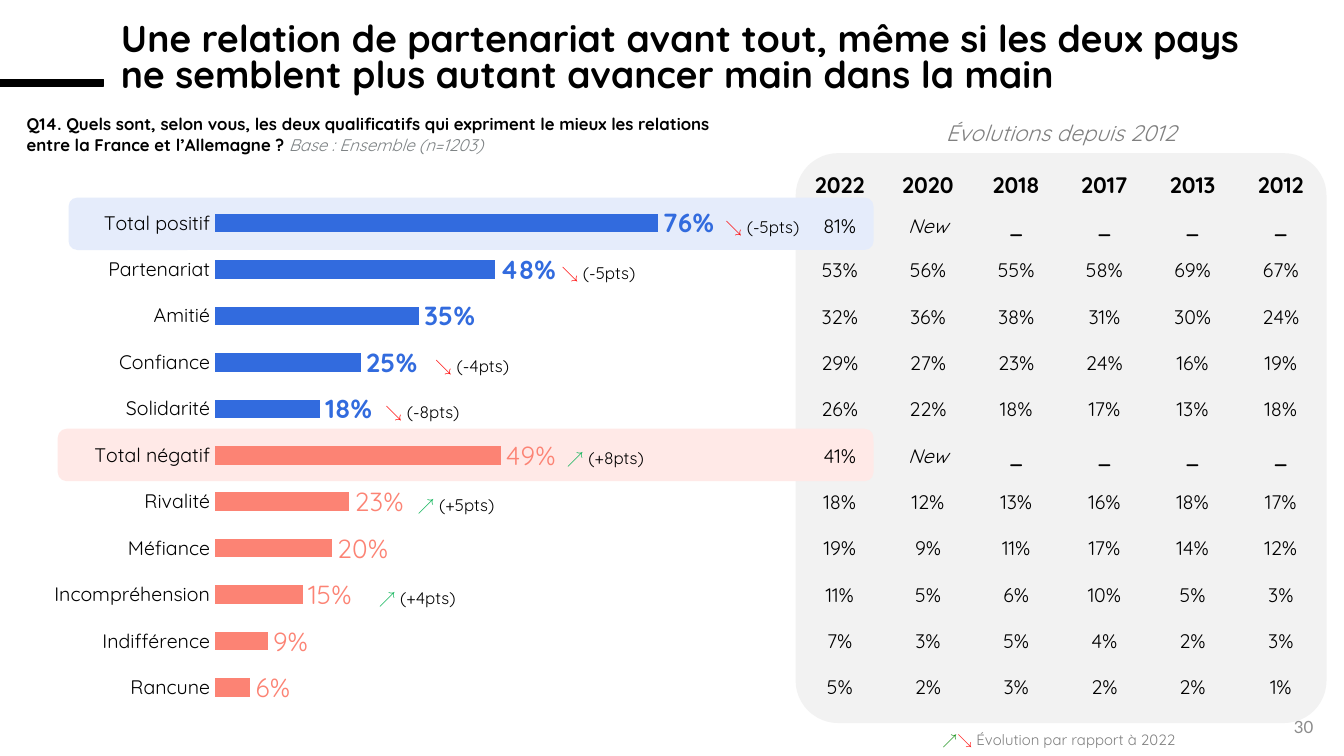
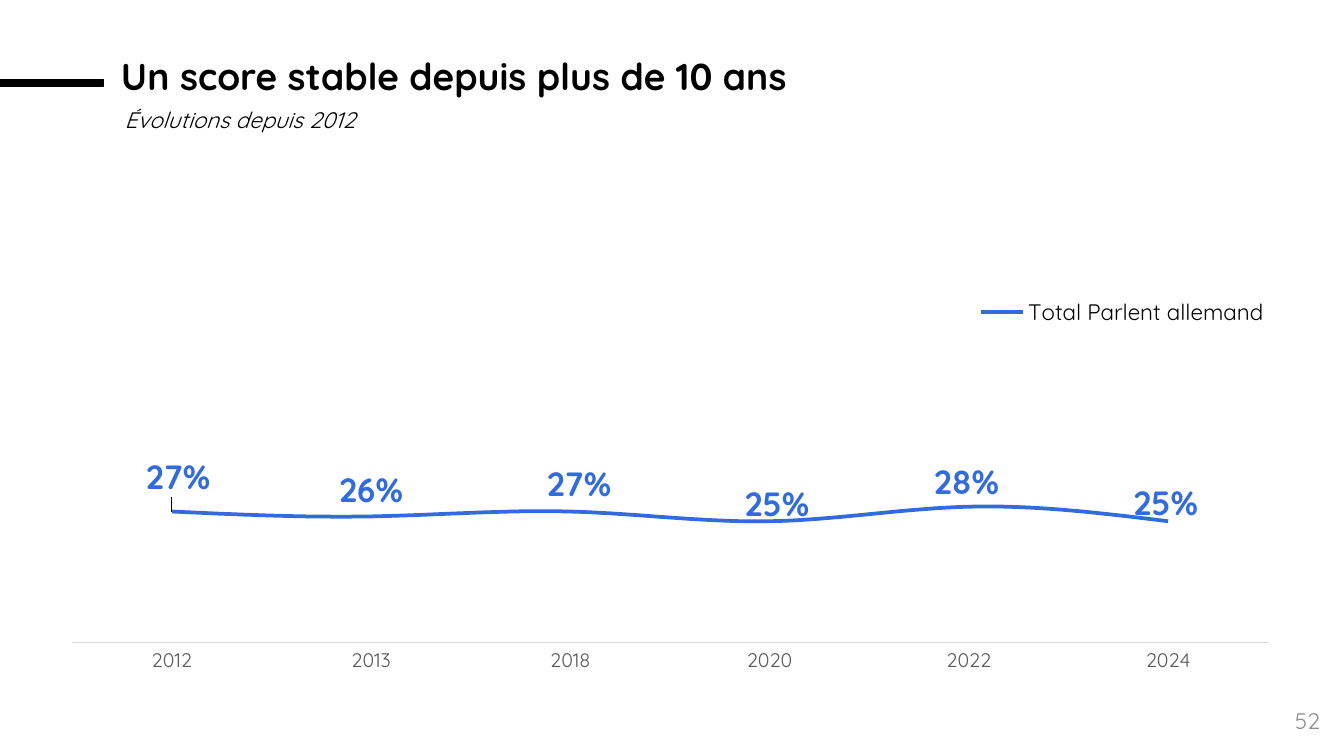
import pptx
import pptx.util
import pptx.oxml
import pptx.chart.data
import pptx.dml.color
import pptx.enum.chart
import pptx.enum.shapes
import pptx.enum.text

# Shared look
FONT = "Quicksand"
BLACK, GREY, PALE_GREY, PAGE_GREY = "000000", "808080", "F2F2F2", "8C8C8C"
BLUE, CORAL, PALE_BLUE, PALE_CORAL = "326BDE", "FC8374", "E5ECFB", "FFE9E7"
RED, GREEN, DARK_GREEN = "FF0000", "00B050", "008500"
NO_GRID_STYLE = "{2D5ABB26-0587-4C30-8999-92F81FD0307C}"
LAYOUT = ('<c:layout xmlns:c="http://schemas.openxmlformats.org/drawingml/2006/chart">'
          '<c:manualLayout>%s</c:manualLayout></c:layout>')
EDGES = '<c:xMode val="edge"/><c:yMode val="edge"/>'
FRAME = '<c:x val="%s"/><c:y val="%s"/><c:w val="%s"/><c:h val="%s"/>'
OFFSET = '<c:x val="%s"/><c:y val="%s"/>'

rgb = pptx.dml.color.RGBColor.from_string
Pt = pptx.util.Pt
SHAPE = pptx.enum.shapes.MSO_SHAPE
ALIGN = pptx.enum.text.PP_ALIGN
ANCHOR = pptx.enum.text.MSO_ANCHOR
AUTO = pptx.enum.text.MSO_AUTO_SIZE
CHART = pptx.enum.chart.XL_CHART_TYPE
LABEL = pptx.enum.chart.XL_LABEL_POSITION

prs = pptx.Presentation()
prs.slide_width = pptx.util.Inches(10)
prs.slide_height = pptx.util.Inches(5.625)
CELL = prs.slide_width / 100  # square grid, 100 columns wide


def grid(*cells):
    return [round(c * CELL) for c in cells]


def write(tf, runs, size, align=ALIGN.LEFT, anchor=ANCHOR.TOP, font=FONT):
    """Fill a text frame with (text, colour, bold, italic) runs."""
    tf.word_wrap = True
    tf.vertical_anchor = anchor
    p = tf.paragraphs[0]
    p.alignment = align
    for text, colour, bold, italic in runs:
        r = p.add_run()
        r.text = text
        r.font.name, r.font.size = font, Pt(size)
        r.font.bold, r.font.italic = bold, italic
        r.font.color.rgb = rgb(colour)


s1, s2 = [prs.slides.add_slide(prs.slide_layouts[5]) for _ in range(2)]

# Panel, highlight bands and title dashes
DASH = (0, 5.9, 7.7, 0.5)
for s, kind, box, colour, radius in [
    (s1, SHAPE.ROUNDED_RECTANGLE, (59.2, 11.4, 39.5, 42.4), PALE_GREY, 0.08),
    (s1, SHAPE.ROUNDED_RECTANGLE, (4.3, 31.9, 60.7, 3.9), PALE_CORAL, 0.17),
    (s1, SHAPE.ROUNDED_RECTANGLE, (5.1, 14.7, 59.9, 3.9), PALE_BLUE, 0.17),
    (s1, SHAPE.RECTANGLE, DASH, BLACK, None),
    (s2, SHAPE.RECTANGLE, DASH, BLACK, None),
]:
    sp = s.shapes.add_shape(kind, *grid(*box))
    sp.shadow.inherit = False
    sp.fill.solid()
    sp.fill.fore_color.rgb = rgb(colour)
    if radius:
        sp.adjustments[0] = radius
        sp.line.fill.background()
    else:
        sp.line.color.rgb = rgb(colour)
        sp.line.width = Pt(0.75)

# Titles
for s, top, height, title in [
    (s1, 1.7, 5.4, "Une relation de partenariat avant tout, même si les deux pays\v"
                   "ne semblent plus autant avancer main dans la main"),
    (s2, 4.6, 2.7, "Un score stable depuis plus de 10 ans"),
]:
    sp = s.shapes.title
    sp.left, sp.top, sp.width, sp.height = grid(9, top, 90.8, height)
    tf = sp.text_frame
    tf.text = title
    tf.word_wrap = True
    tf.auto_size = AUTO.NONE
    tf.vertical_anchor = ANCHOR.BOTTOM
    tf.margin_left = tf.margin_right = tf.margin_top = tf.margin_bottom = 0
    p = tf.paragraphs[0]
    p.alignment, p.line_spacing = ALIGN.LEFT, 0.8
    for r in p.runs:
        r.font.name, r.font.size, r.font.bold = FONT, Pt(20), True
        r.font.color.rgb = rgb(BLACK)

# Table of past years
dash = ["_"] * 4
rows = [
    ["2022", "2020", "2018", "2017", "2013", "2012"],
    ["81%", "New"] + dash,
    ["53%", "56%", "55%", "58%", "69%", "67%"],
    ["32%", "36%", "38%", "31%", "30%", "24%"],
    ["29%", "27%", "23%", "24%", "16%", "19%"],
    ["26%", "22%", "18%", "17%", "13%", "18%"],
    ["41%", "New"] + dash,
    ["18%", "12%", "13%", "16%", "18%", "17%"],
    ["19%", "9%", "11%", "17%", "14%", "12%"],
    ["11%", "5%", "6%", "10%", "5%", "3%"],
    ["7%", "3%", "5%", "4%", "2%", "3%"],
    ["5%", "2%", "3%", "2%", "2%", "1%"],
]
ROW = 3.45
frame = s1.shapes.add_table(len(rows), 6, *grid(59.2, 10.9, 39.4, 42))
table = frame.table
table.first_row = table.horz_banding = False
table._tbl.tblPr[0].text = NO_GRID_STYLE
for i, row in enumerate(rows):
    table.rows[i].height = grid({0: 4.4, 1: 3.1}.get(i, ROW))[0]
    for j, text in enumerate(row):
        cell = table.cell(i, j)
        cell.fill.background()
        cell.vertical_anchor = ANCHOR.MIDDLE if i else ANCHOR.BOTTOM
        if i:
            inset = grid(0.4)[0]
            cell.margin_left = cell.margin_right = inset
            cell.margin_top = cell.margin_bottom = inset
        p = cell.text_frame.paragraphs[0]
        p.text = text
        p.alignment = ALIGN.CENTER
        f = p.runs[0].font
        f.name, f.size = FONT, Pt(10.5 if i else 12)
        f.bold, f.italic = i == 0 or text == "_", text == "New"
        f.color.rgb = rgb(BLACK)

# Charts: each point is (category, value, label shift)
qualities = [("Total positif", 0.76), ("Partenariat", 0.48), ("Amitié", 0.35),
             ("Confiance", 0.25), ("Solidarité", 0.18), ("Total négatif", 0.49),
             ("Rivalité", 0.23), ("Méfiance", 0.2), ("Incompréhension", 0.15),
             ("Indifférence", 0.09), ("Rancune", 0.06)]
FIRST_NEGATIVE = 5
speakers = [("2012", 0.27, (0.005, -0.016)), ("2013", 0.26, None),
            ("2018", 0.27, (0.007, -0.002)), ("2020", 0.25, (0.006, 0.017)),
            ("2022", 0.28, (-0.002, 0.003)), ("2024", 0.25, (-0.002, 0.015))]
charts = []
for s, kind, box, plot_area, name, points, axis_colour, label_size, position in [
    (s1, CHART.BAR_CLUSTERED, (1.6, 13.5, 59.4, 39.4), (0.243, 0.035, 0.729, 0.965),
     "Series 1", [q + (None,) for q in qualities], BLACK, 14, LABEL.OUTSIDE_END),
    (s2, CHART.LINE, (4.1, 10.3, 91.8, 40.4), (0.014, 0.035, 0.969, 0.894),
     "Total Parlent allemand", speakers, "595959", 18, LABEL.ABOVE),
]:
    data = pptx.chart.data.CategoryChartData(number_format="0%")
    data.categories = [point[0] for point in points]
    data.add_series(name, [point[1] for point in points])
    chart = s.shapes.add_chart(kind, *grid(*box), data).chart
    charts.append(chart)
    chart.has_title = chart.has_legend = False
    chart.font.name, chart.font.size = FONT, Pt(10)
    chart.font.color.rgb = rgb(BLACK)

    area = chart._chartSpace.chart.plotArea
    for old in area.findall(pptx.oxml.ns.qn("c:layout")):
        area.remove(old)
    inner = '<c:layoutTarget val="inner"/>' + EDGES + FRAME % plot_area
    area.insert(0, pptx.oxml.parse_xml(LAYOUT % inner))

    values = chart.value_axis
    values.minimum_scale, values.maximum_scale = 0, 1
    values.has_major_gridlines = values.visible = False
    axis = chart.category_axis
    axis.major_tick_mark = pptx.enum.chart.XL_TICK_MARK.NONE
    f = axis.tick_labels.font
    f.name, f.size = FONT, Pt(10.5)
    f.color.rgb = rgb(axis_colour)

    plot = chart.plots[0]
    plot.vary_by_categories = False
    series = plot.series[0]
    labels = series.data_labels
    labels.show_value = True
    labels.number_format, labels.number_format_is_linked = "0%", False
    labels.position = position
    for i, (_, _, shift) in enumerate(points):
        negative = s is s1 and i >= FIRST_NEGATIVE
        colour = CORAL if negative else BLUE
        if s is s1:
            fill = series.points[i].format.fill
            fill.solid()
            fill.fore_color.rgb = rgb(colour)
        label = series.points[i].data_label
        label.position = position
        f = label.font
        f.name, f.size, f.bold = FONT, Pt(label_size), not negative
        f.color.rgb = rgb(colour)
        if shift:
            dLbl = labels._element.findall(pptx.oxml.ns.qn("c:dLbl"))[-1]
            dLbl.insert(1, pptx.oxml.parse_xml(LAYOUT % (OFFSET % shift)))

# Settings of the bar chart alone
bars, line = charts
bars.plots[0].gap_width = 150
bars.category_axis.reverse_order = True
bars.category_axis.format.line.fill.background()

# Settings of the line chart alone
series = line.plots[0].series[0]
series.smooth = True
series.marker.style = pptx.enum.chart.XL_MARKER_STYLE.NONE
series.format.line.color.rgb = rgb(BLUE)
series.format.line.width = Pt(2)
line.category_axis.format.line.color.rgb = rgb("D9D9D9")
line.category_axis.format.line.width = Pt(0.75)
line.has_legend = True
legend = line.legend
legend.position = pptx.enum.chart.XL_LEGEND_POSITION.RIGHT
legend.include_in_layout = False
legend.font.name, legend.font.size = FONT, Pt(12)
legend.font.color.rgb = rgb(BLACK)
spot = EDGES + FRAME % (0.74, 0.28, 0.25, 0.08)
legend._element.insert(1, pptx.oxml.parse_xml(LAYOUT % spot))

# Page numbers, captions and question
since = "Évolutions depuis 2012"
question = ("Q14. Quels sont, selon vous, les deux qualificatifs qui expriment le mieux "
            "les relations entre la France et l’Allemagne ? ")
texts = [
    (s1, (76.2, 52.6, 22.5, 3), [("30", PAGE_GREY, False, False)], 9,
     ALIGN.RIGHT, ANCHOR.MIDDLE, "Lato"),
    (s2, (92.6, 52.1, 6.6, 3), [("52", PAGE_GREY, False, False)], 12,
     ALIGN.RIGHT, ANCHOR.MIDDLE),
    (s1, (59.2, 53.9, 39.2, 2.4),
     [("↗", DARK_GREEN, False, False), ("↘ ", RED, False, False),
      ("Évolution par rapport à 2022", GREY, False, False)], 8, ALIGN.CENTER),
    (s1, (59.2, 8.4, 39.5, 3), [(since, GREY, False, True)], 12, ALIGN.CENTER),
    (s2, (8.3, 7.4, 34.4, 3), [(since, BLACK, False, True)], 12),
    (s1, (1, 8, 54.1, 4), [(question, BLACK, True, False),
                           ("Base : Ensemble (n=1203)", "7E8385", False, True)], 9),
]

# Changes beside the bars: row, left column, points
for row, left, change in [(0, 53, -5), (1, 40.8, -5), (3, 31.4, -4), (4, 27.7, -8),
                          (5, 41.2, 8), (6, 30.1, 5), (8, 27.2, 4)]:
    arrow, colour = ("↗", GREEN) if change > 0 else ("↘", RED)
    runs = [(arrow, colour, False, False), (f" ({change:+d}pts)", BLACK, False, False)]
    texts.append((s1, (left, 15.6 + row * ROW, 8.6, 2.5), runs, 9))

for s, box, *content in texts:
    sp = s.shapes.add_textbox(*grid(*box))
    write(sp.text_frame, *content)

prs.save("out.pptx")
